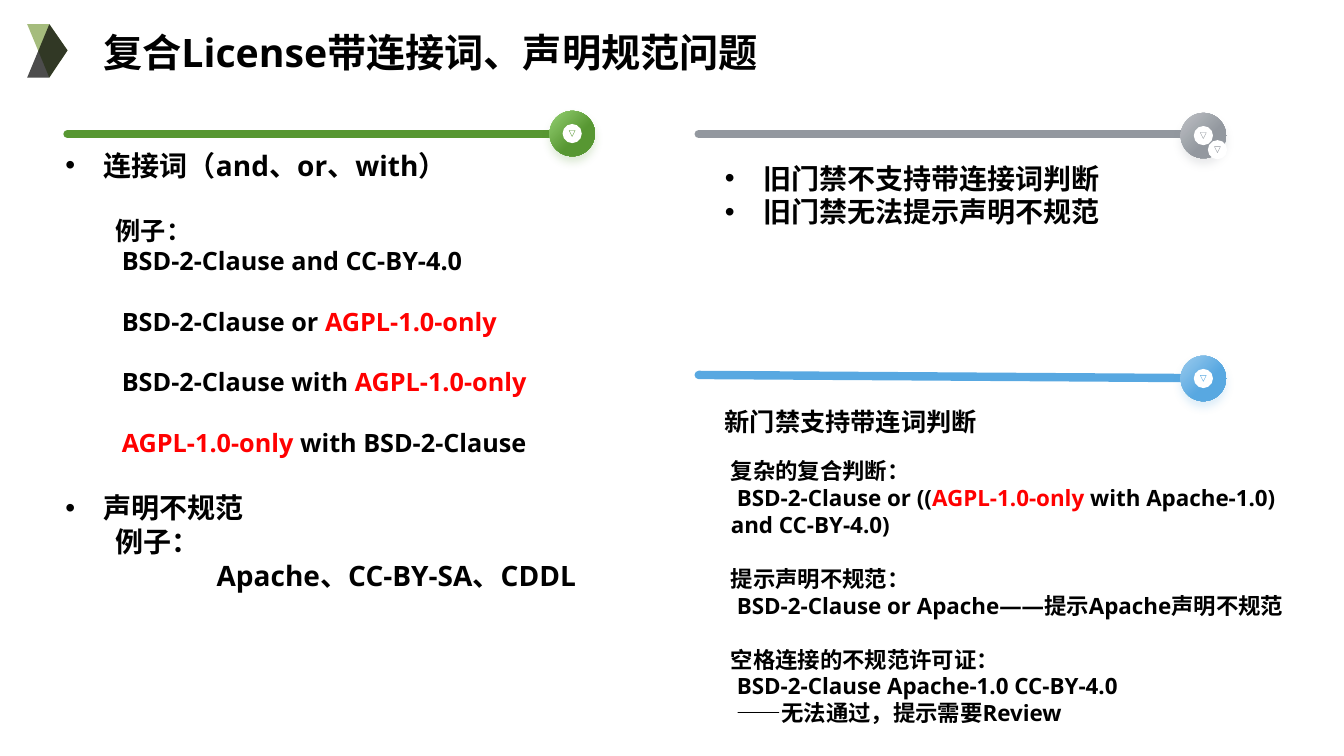
from lxml import etree
from pptx import Presentation
from pptx.dml.color import RGBColor
from pptx.enum.shapes import MSO_CONNECTOR, MSO_SHAPE
from pptx.enum.text import MSO_ANCHOR, MSO_AUTO_SIZE, PP_ALIGN
from pptx.oxml import parse_xml
from pptx.oxml.ns import nsdecls, qn
from pptx.util import Inches, Pt

COLORS = {
    "black": "000000", "white": "FFFFFF", "red": "FF0000", "olive": "80A047",
    "green": "579732", "light green": "96D174",
    "gray": "93989F", "light gray": "BEC1C5",
    "blue": "58A8E1", "light blue": "9BCBED",
}
FONT = "Noto Sans"
FLAGGED = "AGPL-1.0-only"  # the license that is always shown in red


def rgb(name):
    return RGBColor.from_string(COLORS[name])


def write(frame, text, size=16, before=0, margin=0.0, first=0.0, bullet=False,
          align=PP_ALIGN.LEFT):
    """Add one bold paragraph, with the flagged license in red."""
    paragraph = frame.paragraphs[0]
    if paragraph.runs:
        paragraph = frame.add_paragraph()
    properties = paragraph._p.get_or_add_pPr()
    properties.set("marL", str(Inches(margin)))
    properties.set("indent", str(Inches(first)))
    if bullet:
        etree.SubElement(properties, qn("a:buFont")).set("typeface", "Arial")
        etree.SubElement(properties, qn("a:buChar")).set("char", "•")
    paragraph.alignment = align
    if before:
        paragraph.space_before = Pt(before)
    plain, found, rest = text.partition(FLAGGED)
    for part, color in ((plain, "black"), (found, "red"), (rest, "black")):
        if part:
            run = paragraph.add_run()
            run.text = part
            run.font.name, run.font.size, run.font.bold = FONT, Pt(size), True
            run.font.color.rgb = rgb(color)


deck = Presentation()
deck.slide_width, deck.slide_height = Inches(13.33), Inches(7.5)
slide = deck.slides.add_slide(deck.slide_layouts[5])
shapes = slide.shapes

# Chevron beside the title: one half mirrored onto the other
TOP, MIDDLE, BOTTOM = 0.24, 0.5, 0.77
for color, near, far in (("olive", TOP, BOTTOM), ("black", BOTTOM, TOP)):
    outline = shapes.build_freeform(Inches(0.27), Inches(near), scale=1.0)
    outline.add_line_segments([(Inches(x), Inches(y)) for x, y in
                               ((0.49, far), (0.67, MIDDLE), (0.49, near))])
    half = outline.convert_to_shape()
    half.shadow.inherit = False
    half.fill.solid()
    half.fill.fore_color.rgb = rgb(color)
    half.line.fill.background()
    tint = half._element.spPr.find(".//" + qn("a:srgbClr"))
    etree.SubElement(tint, qn("a:alpha")).set("val", "70000")

# Title
title = shapes.title
title.left, title.top, title.width, title.height = map(Inches, (0.68, 0.11, 7.18, 0.69))
title.text_frame.auto_size = MSO_AUTO_SIZE.NONE
title.text_frame.word_wrap = False
title.text_frame.vertical_anchor = MSO_ANCHOR.BOTTOM
write(title.text_frame, "复合License带连接词、声明规范问题", size=28, align=PP_ALIGN.CENTER)

# Section rules, each ending in a badge
BADGE, DISC, MARK = 0.45, 0.19, 0.06
RULE_LENGTH = 4.78
discs = []
for color, left, start_y, end_y, badge_top in (
        ("green", 0.67, 1.33, 1.33, 1.1),
        ("gray", 6.93, 1.33, 1.33, 1.12),
        ("blue", 6.93, 3.72, 3.75, 3.53)):
    badge_left = left + RULE_LENGTH
    rule = shapes.add_connector(MSO_CONNECTOR.STRAIGHT, Inches(left), Inches(start_y),
                                Inches(badge_left), Inches(end_y))
    rule.line.color.rgb = rgb(color)
    rule.line.width = Pt(6)
    rule.line._get_or_add_ln().set("cap", "rnd")
    etree.SubElement(rule._element.spPr, qn("a:effectLst"))

    badge = shapes.add_shape(MSO_SHAPE.OVAL, Inches(badge_left), Inches(badge_top),
                             Inches(BADGE), Inches(BADGE))
    badge.line.fill.background()
    badge.fill.gradient()
    badge.fill.gradient_angle = 315
    for stop, shade, position in zip(badge.fill.gradient_stops,
                                     ("light " + color, color), (0, 0.6)):
        stop.color.rgb = rgb(shade)
        stop.position = position
    badge.shadow.inherit = False
    badge._element.spPr.find(qn("a:effectLst")).append(parse_xml(
        f'<a:outerShdw {nsdecls("a")} blurRad="{Pt(6)}" dist="{Pt(4)}" dir="5400000">'
        f'<a:srgbClr val="{COLORS[color]}"><a:alpha val="20000"/></a:srgbClr>'
        '</a:outerShdw>'))
    inset = (BADGE - DISC) / 2
    discs.append((color, badge_left + inset, badge_top + inset))

# White discs with a small triangle; the gray badge carries a second one
discs.append(("gray", 11.98, 1.39))
for color, left, top in discs:
    gap = (DISC - MARK) / 2
    for kind, x, y, side in ((MSO_SHAPE.OVAL, left, top, DISC),
                             (MSO_SHAPE.FLOWCHART_MERGE, left + gap, top + gap, MARK)):
        part = shapes.add_shape(kind, Inches(x), Inches(y), Inches(side), Inches(side))
        part.shadow.inherit = False
        part.fill.solid()
        part.fill.fore_color.rgb = rgb("white")
        if kind == MSO_SHAPE.OVAL:
            part.line.fill.background()
        else:
            part.line.color.rgb = rgb(color)
            part.line.width = Pt(0.25)

# Text of the sections: box, then paragraphs with their format
POINT = dict(size=20, margin=0.38, first=-0.38, bullet=True)
EXAMPLE = dict(size=18, margin=0.56)
CASE = dict(first=0.06)
sections = (
    ((0.55, 1.42, 5.75, 4.88), (
        ("连接词（and、or、with）", POINT),
        ("例子：", dict(size=18, margin=0.5, before=24)),
        ("BSD-2-Clause and CC-BY-4.0", EXAMPLE),
        ("BSD-2-Clause or AGPL-1.0-only", EXAMPLE | dict(before=21.6)),
        ("BSD-2-Clause with AGPL-1.0-only", EXAMPLE | dict(before=21.6)),
        ("AGPL-1.0-only with BSD-2-Clause", EXAMPLE | dict(before=21.6)),
        ("声明不规范", POINT | dict(before=24)),
        ("例子：", dict(size=20, margin=0.5)),
        ("Apache、CC-BY-SA、CDDL", dict(size=20, margin=1.5)))),
    ((7.09, 1.55, 4.21, 0.77), (
        ("旧门禁不支持带连接词判断", POINT),
        ("旧门禁无法提示声明不规范", POINT))),
    ((7.09, 3.98, 3.54, 0.4), (
        ("新门禁支持带连词判断", dict(size=18)),)),
    ((7.15, 4.49, 6.01, 3.01), (
        ("复杂的复合判断：", {}),
        ("BSD-2-Clause or ((AGPL-1.0-only with Apache-1.0) and CC-BY-4.0)", CASE),
        ("提示声明不规范：", dict(before=19.2)),
        ("BSD-2-Clause or Apache——提示Apache声明不规范", CASE),
        ("空格连接的不规范许可证：", dict(before=19.2)),
        ("BSD-2-Clause Apache-1.0 CC-BY-4.0", CASE),
        ("——无法通过，提示需要Review", CASE))),
)
for place, lines in sections:
    section = shapes.add_textbox(*map(Inches, place)).text_frame
    section.word_wrap = True
    for text, style in lines:
        write(section, text, **style)

deck.save("out.pptx")
